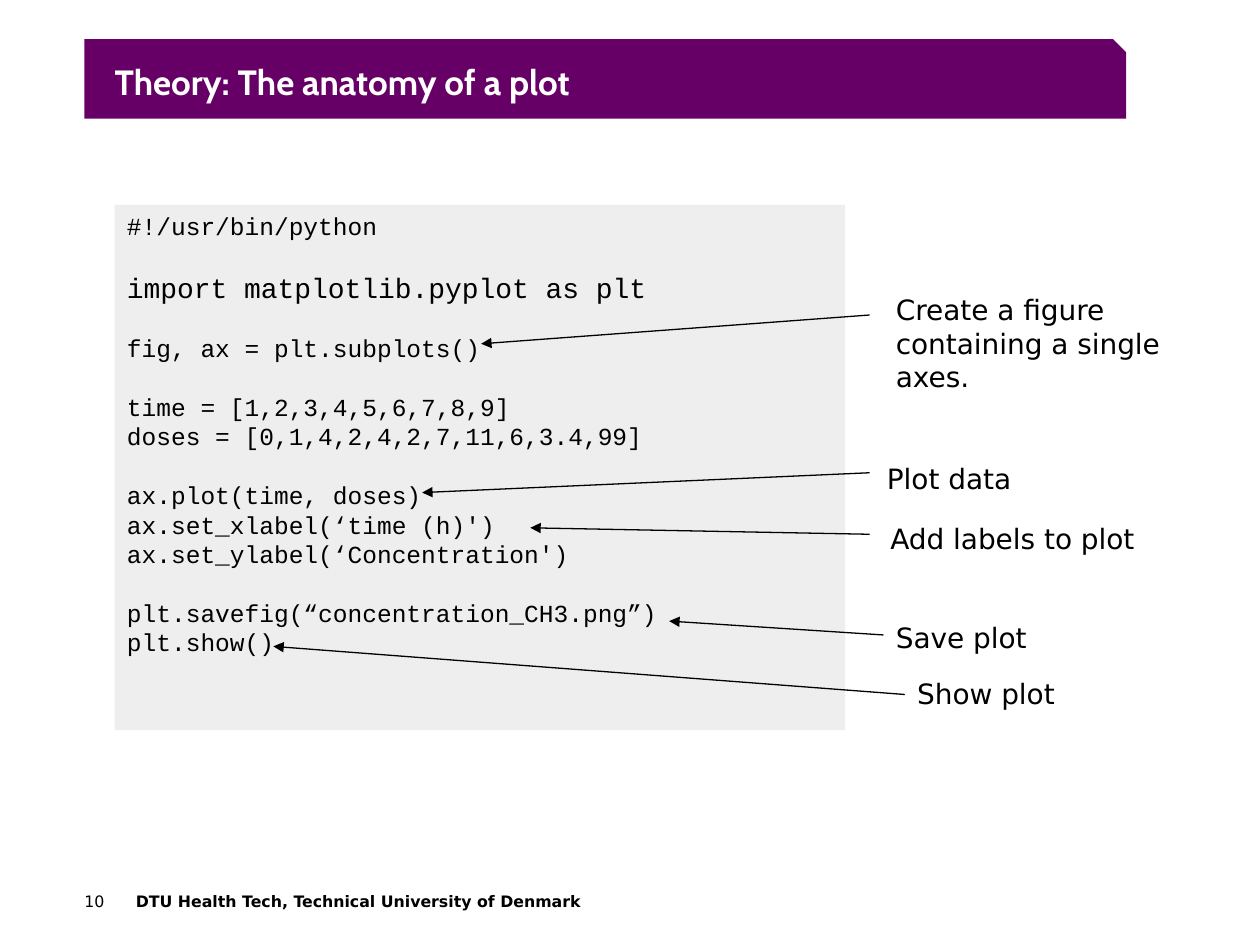
from dataclasses import dataclass

from lxml.etree import SubElement
from pptx import Presentation
from pptx.dml.color import RGBColor
from pptx.enum.shapes import MSO_CONNECTOR, MSO_SHAPE
from pptx.enum.text import MSO_ANCHOR, PP_ALIGN
from pptx.oxml.ns import qn
from pptx.util import Cm, Pt


@dataclass(frozen=True)
class Theme:
    banner: RGBColor = RGBColor(0x66, 0x00, 0x66)
    panel: RGBColor = RGBColor(0xEE, 0xEE, 0xEE)
    ink: RGBColor = RGBColor(0, 0, 0)
    paper: RGBColor = RGBColor(0xFF, 0xFF, 0xFF)
    title_font: str = "Cabin"
    body_font: str = "DejaVu Sans"
    code_font: str = "Courier New"
    title_size: float = 20
    label_size: float = 16
    import_size: float = 16
    code_size: float = 14
    footer_size: float = 9
    leading: float = 1.2
    line_width: float = 0.75


@dataclass(frozen=True)
class Note:
    """A label with an arrow to the code it explains; lengths in cm."""
    text: str
    label: tuple[float, float]
    start: tuple[float, float]
    end: tuple[float, float]


T = Theme()
PAD_X, PAD_Y = 0.25, 0.13

CODE_BLOCKS = [
    ["#!/usr/bin/python"],
    ["import matplotlib.pyplot as plt"],
    ["fig, ax = plt.subplots()"],
    ["time = [1,2,3,4,5,6,7,8,9]",
     "doses = [0,1,4,2,4,2,7,11,6,3.4,99]"],
    ["ax.plot(time, doses)",
     "ax.set_xlabel(‘time (h)')",
     "ax.set_ylabel(‘Concentration')"],
    ["plt.savefig(“concentration_CH3.png”)",
     "plt.show()"],
]

NOTES = [
    Note("Create a figure containing a single axes.",
         (17.81, 5.77), (17.53, 6.35), (9.7, 6.93)),
    Note("Plot data", (17.63, 9.17), (17.53, 9.53), (8.51, 9.93)),
    Note("Add labels to plot", (17.7, 10.39), (17.53, 10.77), (10.69, 10.64)),
    Note("Save plot", (17.81, 12.37), (17.81, 12.8), (13.49, 12.52)),
    Note("Show plot", (18.24, 13.51), (18.24, 14), (5.51, 13.03)),
]


def set_frame(tf, pad_x: float = 0, pad_y: float = 0, anchor=MSO_ANCHOR.TOP) -> None:
    tf.word_wrap = True
    tf.vertical_anchor = anchor
    tf.margin_left = tf.margin_right = Cm(pad_x)
    tf.margin_top = tf.margin_bottom = Cm(pad_y)


def style(p, font: str, size: float, color: RGBColor, bold: bool = False) -> None:
    p.alignment = PP_ALIGN.LEFT
    for r in p.runs:
        r.font.name = font
        r.font.size = Pt(size)
        r.font.bold = bold
        r.font.color.rgb = color


def add_text(s, text: str, box: tuple[float, float, float, float], font: str,
             size: float, color: RGBColor, bold: bool = False, **frame):
    tf = s.shapes.add_textbox(*map(Cm, box)).text_frame
    set_frame(tf, **frame)
    tf.text = text
    p = tf.paragraphs[0]
    style(p, font, size, color, bold)
    return p


def fill_plain(sp, color: RGBColor) -> None:
    sp.shadow.inherit = False
    sp.fill.solid()
    sp.fill.fore_color.rgb = color
    sp.line.fill.background()


def add_banner(s) -> None:
    left, top, right, bottom, snip = 1.7, 0.79, 22.7, 2.39, 0.26
    fb = s.shapes.build_freeform(Cm(left), Cm(top))
    corners = [(right - snip, top), (right, top + snip), (right, bottom), (left, bottom)]
    fb.add_line_segments([(Cm(x), Cm(y)) for x, y in corners], close=True)
    fill_plain(fb.convert_to_shape(), T.banner)
    add_text(s, "Theory: The anatomy of a plot", (2.31, 0.76, 21.59, 1.3),
             T.title_font, T.title_size, T.paper, True, anchor=MSO_ANCHOR.BOTTOM)


def add_code(s) -> None:
    """Draw the code panel, with one line of space between blocks."""
    sp = s.shapes.add_shape(MSO_SHAPE.RECTANGLE, Cm(2.31), Cm(4.13), Cm(14.73), Cm(10.59))
    fill_plain(sp, T.panel)
    tf = sp.text_frame
    set_frame(tf, PAD_X, PAD_Y)
    tf.text = "\n".join(line for block in CODE_BLOCKS for line in block)
    block_starts = {block[0] for block in CODE_BLOCKS[1:]}
    for p in tf.paragraphs:
        size = T.import_size if p.text.startswith("import") else T.code_size
        p.line_spacing = Pt(size * T.leading)
        if p.text in block_starts:
            p.space_before = Pt(T.code_size * T.leading)
        style(p, T.code_font, size, T.ink)


def add_arrow(s, start: tuple[float, float], end: tuple[float, float]) -> None:
    c = s.shapes.add_connector(MSO_CONNECTOR.STRAIGHT, *map(Cm, start + end))
    c.line.color.rgb = T.ink
    c.line.width = Pt(T.line_width)
    SubElement(c.line._get_or_add_ln(), qn("a:tailEnd"), type="triangle")
    SubElement(c._element.spPr, qn("a:effectLst"))


def add_note(s, note: Note) -> None:
    add_arrow(s, note.start, note.end)
    p = add_text(s, note.text, (*note.label, 6.1, 0.91), T.body_font,
                 T.label_size, T.ink, pad_x=PAD_X, pad_y=PAD_Y)
    p.line_spacing = Pt(T.label_size * T.leading)


def add_footer(s) -> None:
    top, height = 17.98, 0.84
    add_text(s, "10", (1.7, top, 0.84, height), T.body_font, T.footer_size, T.ink)
    add_text(s, "DTU Health Tech, Technical University of Denmark",
             (2.74, top, 10.26, height), T.body_font, T.footer_size, T.ink, True)


def main() -> None:
    prs = Presentation()
    prs.slide_width, prs.slide_height = Cm(25.4), Cm(19.05)
    s = prs.slides.add_slide(prs.slide_layouts[6])
    add_footer(s)
    add_banner(s)
    add_code(s)
    for note in NOTES:
        add_note(s, note)
    prs.save("out.pptx")


if __name__ == "__main__":
    main()
